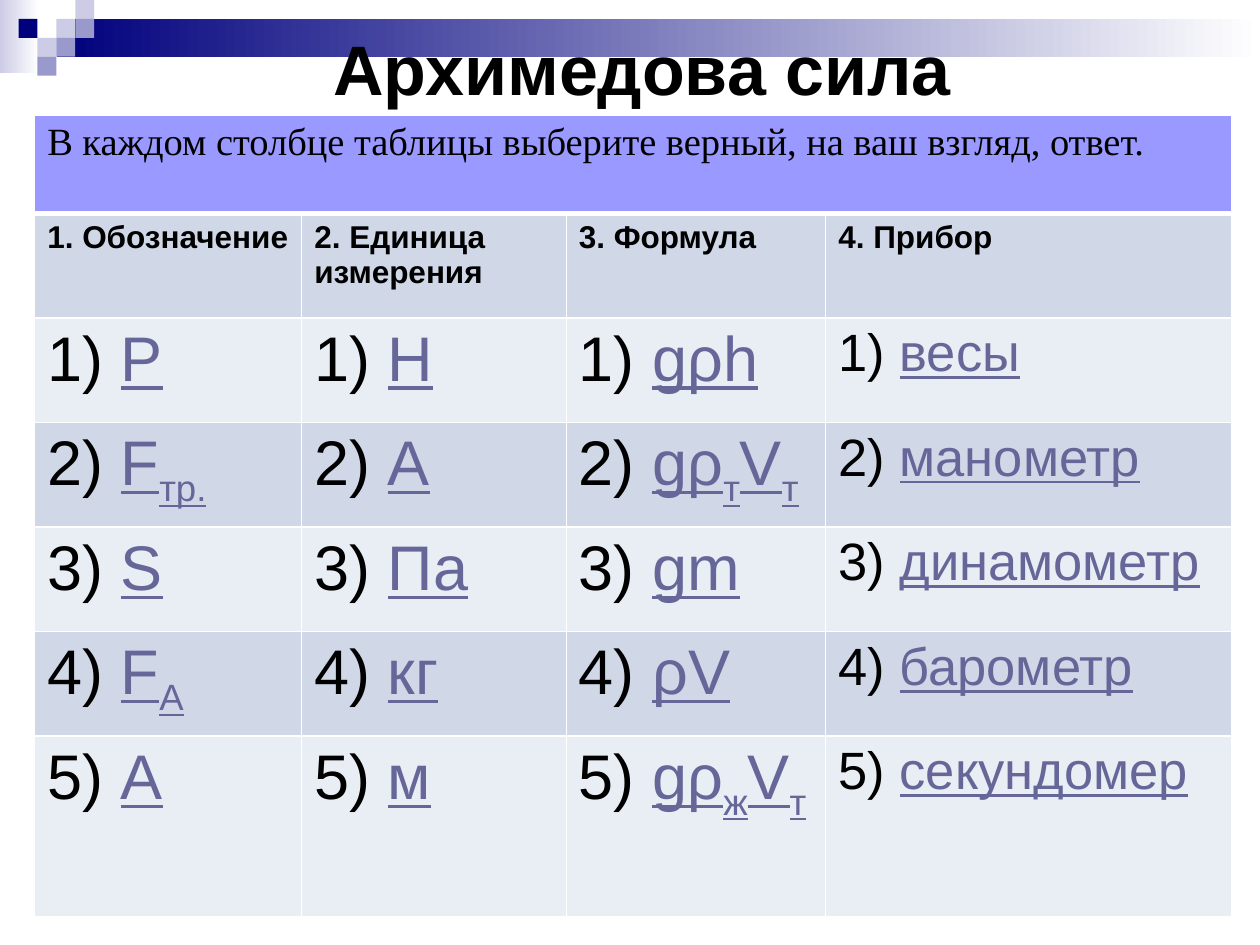
from dataclasses import dataclass

from lxml import etree
from pptx import Presentation
from pptx.dml.color import RGBColor
from pptx.enum import shapes, text
from pptx.oxml import ns
from pptx.util import Pt


@dataclass(frozen=True)
class Theme:
    navy: str = "00007D"
    lilac: str = "9999CC"
    pale: str = "CCCCE6"
    white: str = "FFFFFF"
    black: str = "000000"
    answer: str = "666699"
    banner: str = "9999FF"
    bands: tuple = ("D0D8E8", "E9EDF4")
    sans: str = "Arial"
    serif: str = "Times New Roman"
    title_size: float = 40
    banner_size: float = 22
    heading_size: float = 18
    symbol_size: float = 36
    device_size: float = 30


THEME = Theme()

TITLE = "Архимедова сила"
TASK = "В каждом столбце таблицы выберите верный, на ваш взгляд, ответ."
HEADINGS = ["1. Обозначение", "2. Единица измерения", "3. Формула", "4. Прибор"]
# Every second piece between bars is a subscript
ANSWERS = [
    ["P", "H", "gρh", "весы"],
    ["F|тр.", "A", "gρ|т|V|т", "манометр"],
    ["S", "Па", "gm", "динамометр"],
    ["F|A", "кг", "ρV", "барометр"],
    ["A", "м", "gρ|ж|V|т", "секундомер"],
]
COLUMN_WIDTHS = [152.6, 151.2, 148.3, 231.8]
ROW_HEIGHTS = [56.1] + [59.76] * 5 + [103]

# Corner squares: column and row on a square grid, colour
SQUARE = 10.8
GRID_LEFT = 10.6
SQUARES = [
    (2, 1, THEME.pale), (3, 0, THEME.pale), (3, 1, THEME.lilac),
    (1, 2, THEME.pale), (0, 1, THEME.navy), (2, 2, THEME.lilac),
    (1, 3, THEME.lilac),
]


def rgb(color):
    return RGBColor.from_string(color)


def style_font(font, size, color=THEME.black, name=THEME.sans, bold=False):
    font.size, font.name, font.bold = Pt(size), name, bold
    font.color.rgb = rgb(color)


def add_block(slide, left, top, width, height, color, end_color=None):
    """Rectangle, plain or fading to the right."""
    shape = slide.shapes.add_shape(
        shapes.MSO_SHAPE.RECTANGLE, Pt(left), Pt(top), Pt(width), Pt(height))
    shape.shadow.inherit = False
    shape.line.fill.background()
    if end_color:
        shape.fill.gradient()
        shape.fill.gradient_angle = 0
        for stop, stop_color, position in zip(
                shape.fill.gradient_stops, (color, end_color), (0, 1)):
            stop.color.rgb = rgb(stop_color)
            stop.position = position
    else:
        shape.fill.solid()
        shape.fill.fore_color.rgb = rgb(color)


def add_decoration(slide):
    add_block(slide, 0, 0, 22.3, 41.8, THEME.pale, THEME.white)
    add_block(slide, 32.4, SQUARE, 687.6, 21.6, THEME.navy, THEME.white)
    for column, row, color in SQUARES:
        add_block(slide, GRID_LEFT + column * SQUARE, row * SQUARE,
                  SQUARE, SQUARE, color)


def add_title(slide):
    title = slide.shapes.title
    title.left, title.top = Pt(36), Pt(21.6)
    title.width, title.height = Pt(661.7), Pt(44.6)
    frame = title.text_frame
    frame.text = TITLE
    frame.auto_size = text.MSO_AUTO_SIZE.NONE
    frame.vertical_anchor = text.MSO_ANCHOR.BOTTOM
    paragraph = frame.paragraphs[0]
    paragraph.alignment = text.PP_ALIGN.CENTER
    style_font(paragraph.runs[0].font, THEME.title_size, bold=True)
    # Keep the title in front of the decoration
    slide.shapes._spTree.append(title._element)


def format_cell(cell, fill, top=1, bottom=1):
    properties = cell._tc.get_or_add_tcPr()
    for side, width in (("L", 1), ("R", 1), ("T", top), ("B", bottom)):
        line = etree.SubElement(
            properties, ns.qn("a:ln" + side), w=str(Pt(width)))
        solid = etree.SubElement(line, ns.qn("a:solidFill"))
        etree.SubElement(solid, ns.qn("a:srgbClr"), val=THEME.white)
    cell.fill.solid()
    cell.fill.fore_color.rgb = rgb(fill)


def write_answer(cell, number, answer, size):
    paragraph = cell.text_frame.paragraphs[0]
    paragraph.text = f"{number}) "
    style_font(paragraph.runs[0].font, size)
    for index, piece in enumerate(answer.split("|")):
        run = paragraph.add_run()
        run.text = piece
        style_font(run.font, size, THEME.answer)
        run.font.underline = True
        if index % 2:
            run.font._element.set("baseline", "-25000")


def add_answer_table(slide):
    table = slide.shapes.add_table(
        len(ROW_HEIGHTS), len(COLUMN_WIDTHS), Pt(19.8), Pt(65.8),
        Pt(sum(COLUMN_WIDTHS)), Pt(sum(ROW_HEIGHTS))).table
    table.first_row = table.horz_banding = False
    for column, width in zip(table.columns, COLUMN_WIDTHS):
        column.width = Pt(width)
    for row, height in zip(table.rows, ROW_HEIGHTS):
        row.height = Pt(height)

    # Task across the full width
    table.cell(0, 0).merge(table.cell(0, len(COLUMN_WIDTHS) - 1))
    for cell in table.rows[0].cells:
        format_cell(cell, THEME.banner, bottom=3)
    paragraph = table.cell(0, 0).text_frame.paragraphs[0]
    paragraph.text = TASK
    style_font(paragraph.runs[0].font, THEME.banner_size, name=THEME.serif)

    # Column headings
    for cell, heading in zip(table.rows[1].cells, HEADINGS):
        format_cell(cell, THEME.bands[0], top=3)
        cell.text_frame.text = heading
        style_font(cell.text_frame.paragraphs[0].runs[0].font,
                   THEME.heading_size, bold=True)

    # Numbered answers
    sizes = [THEME.symbol_size] * 3 + [THEME.device_size]
    for number, answers in enumerate(ANSWERS, start=1):
        cells = table.rows[number + 1].cells
        for cell, answer, size in zip(cells, answers, sizes):
            format_cell(cell, THEME.bands[number % 2])
            write_answer(cell, number, answer, size)


def main():
    presentation = Presentation()
    presentation.slide_width, presentation.slide_height = Pt(720), Pt(540)
    slide = presentation.slides.add_slide(presentation.slide_layouts[5])
    add_decoration(slide)
    add_title(slide)
    add_answer_table(slide)
    presentation.save("out.pptx")


if __name__ == "__main__":
    main()
